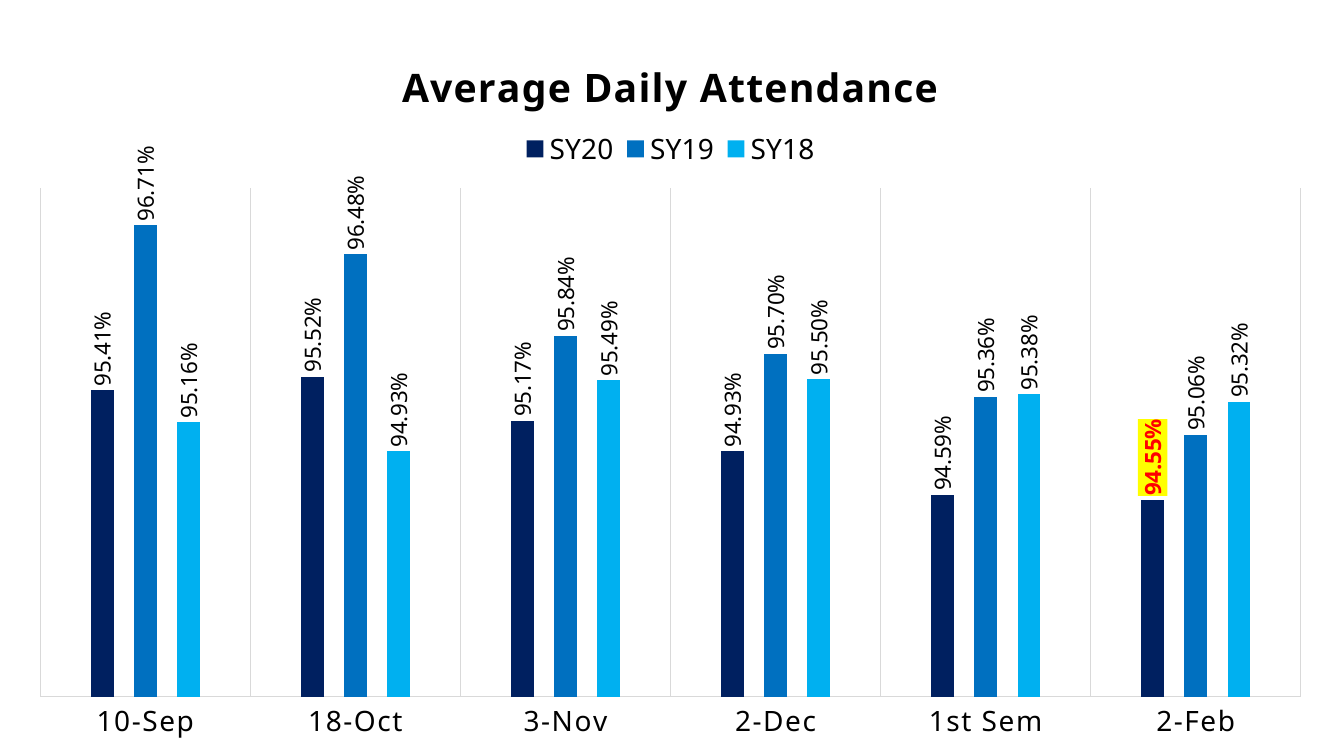
"""Builds a one-slide deck with a clustered column chart of average daily attendance."""
from dataclasses import dataclass

from lxml.etree import SubElement
from pptx import Presentation
from pptx.chart.data import CategoryChartData
from pptx.dml.color import RGBColor
from pptx.enum.chart import XL_CHART_TYPE, XL_LABEL_POSITION, XL_LEGEND_POSITION, XL_TICK_MARK
from pptx.oxml import parse_xml
from pptx.oxml.ns import nsdecls, qn
from pptx.util import Inches, Pt


@dataclass(frozen=True)
class Theme:
    font: str = "Noto Sans"
    text: str = "000000"
    grid: str = "D9D9D9"
    alert: str = "FF0000"
    highlight: str = "FFFF00"
    series: tuple = ("002060", "0070C0", "00B0F0")
    title_size: int = 28
    axis_size: int = 20
    label_size: int = 16
    base_size: int = 10
    letter_spacing: str = "100"


PERIODS = ["10-Sep", "18-Oct", "3-Nov", "2-Dec", "1st Sem", "2-Feb"]
ATTENDANCE = {
    "SY20": [0.9541, 0.9552, 0.9517, 0.9493, 0.9459, 0.9455],
    "SY19": [0.9671, 0.9648, 0.9584, 0.957, 0.9536, 0.9506],
    "SY18": [0.9516, 0.9493, 0.9549, 0.955, 0.9538, 0.9532],
}
PERCENT = "0.00%"


def style_font(font, size, color, name, bold=False):
    font.size, font.bold, font.name = Pt(size), bold, name
    font.color.rgb = RGBColor.from_string(color)


def write(frame, text, spacing="0", **format):
    paragraph = frame.paragraphs[0]
    run = paragraph.add_run()
    run.text = text
    style_font(run.font, **format)
    run._r.get_or_add_rPr().set("spc", spacing)


def place(element, index, target=None, **shares):
    for old_layout in element.findall(qn("c:layout")):
        element.remove(old_layout)
    layout = parse_xml(f"<c:layout {nsdecls('c')}/>")
    manual = SubElement(layout, qn("c:manualLayout"))
    if target:
        SubElement(manual, qn("c:layoutTarget")).set("val", target)
    for axis in ("x", "y"):
        SubElement(manual, qn(f"c:{axis}Mode")).set("val", "edge")
    for key, share in shares.items():
        SubElement(manual, qn(f"c:{key}")).set("val", str(share))
    element.insert(index, layout)


def turn_upright(labels_element):
    for body in labels_element.findall(f"{qn('c:txPr')}/{qn('a:bodyPr')}"):
        body.set("rot", "-5400000")
        body.set("vert", "horz")


class AttendanceSlide:
    def __init__(self, presentation, theme):
        self.theme = theme
        self.width = presentation.slide_width
        self.height = presentation.slide_height
        self.slide = presentation.slides.add_slide(presentation.slide_layouts[6])

    def format(self, size, color=None, bold=False):
        return dict(size=size, color=color or self.theme.text, name=self.theme.font, bold=bold)

    def add_columns(self, left, top, width, height, periods, values):
        data = CategoryChartData(number_format=PERCENT)
        data.categories = periods
        for name, numbers in values.items():
            data.add_series(name, numbers)
        box = (int(self.width * left), int(self.height * top),
               int(self.width * width), int(self.height * height))
        chart = self.slide.shapes.add_chart(XL_CHART_TYPE.COLUMN_CLUSTERED, *box, data).chart
        style_font(chart.font, **self.format(self.theme.base_size))
        plot = chart.plots[0]
        plot.gap_width, plot.overlap, plot.vary_by_categories = 444, -90, False
        for series, color in zip(plot.series, self.theme.series):
            series.invert_if_negative = False
            series.format.fill.solid()
            series.format.fill.fore_color.rgb = RGBColor.from_string(color)
            self.label(series)
        place(chart._chartSpace.chart.plotArea, 0, "inner", x=0.02, y=0.23, w=0.96, h=0.69)
        return chart

    def label(self, series):
        labels = series.data_labels
        labels.show_value = True
        labels.number_format, labels.number_format_is_linked = PERCENT, False
        labels.position = XL_LABEL_POSITION.OUTSIDE_END
        style_font(labels.font, **self.format(self.theme.label_size))
        turn_upright(labels._element)

    def highlight(self, series, index):
        label = series.points[index].data_label
        style_font(label.font, **self.format(self.theme.label_size, self.theme.alert, True))
        label.position = XL_LABEL_POSITION.OUTSIDE_END
        element = series.data_labels._element.find(qn("c:dLbl"))
        element.find(qn("c:txPr")).addprevious(parse_xml(
            f"<c:spPr {nsdecls('c', 'a')}><a:solidFill>"
            f"<a:srgbClr val='{self.theme.highlight}'/></a:solidFill></c:spPr>"))
        turn_upright(element)

    def add_title(self, chart, text):
        chart.has_title = True
        write(chart.chart_title.text_frame, text, spacing=self.theme.letter_spacing,
              **self.format(self.theme.title_size, bold=True))
        place(chart.chart_title._element, 1, x=0.29, y=0.04)

    def add_legend(self, chart):
        chart.has_legend = True
        legend = chart.legend
        legend.position = XL_LEGEND_POSITION.TOP
        legend.include_in_layout = False
        style_font(legend.font, **self.format(self.theme.axis_size))
        place(legend._element, 1, x=0.38, y=0.15, w=0.24, h=0.05)

    def style_axes(self, chart):
        value_axis, category_axis = chart.value_axis, chart.category_axis
        value_axis.minimum_scale, value_axis.maximum_scale = 0.93, 0.97
        value_axis.has_major_gridlines = False
        value_axis.visible = False
        category_axis.has_major_gridlines = True
        category_axis.major_tick_mark = XL_TICK_MARK.NONE
        for line in (category_axis.format.line, category_axis.major_gridlines.format.line):
            line.color.rgb = RGBColor.from_string(self.theme.grid)
            line.width = Pt(0.75)
        font = category_axis.tick_labels.font
        style_font(font, **self.format(self.theme.axis_size))
        for properties in category_axis._element.iter(qn("a:defRPr")):
            properties.set("spc", self.theme.letter_spacing)


def main():
    presentation = Presentation()
    presentation.slide_width, presentation.slide_height = Inches(13.33), Inches(7.5)
    page = AttendanceSlide(presentation, Theme())
    chart = page.add_columns(0.0105, 0.025, 0.977, 0.975, PERIODS, ATTENDANCE)
    page.add_title(chart, "Average Daily Attendance")
    page.add_legend(chart)
    page.style_axes(chart)
    page.highlight(chart.plots[0].series[0], PERIODS.index("2-Feb"))
    presentation.save("out.pptx")


if __name__ == "__main__":
    main()
